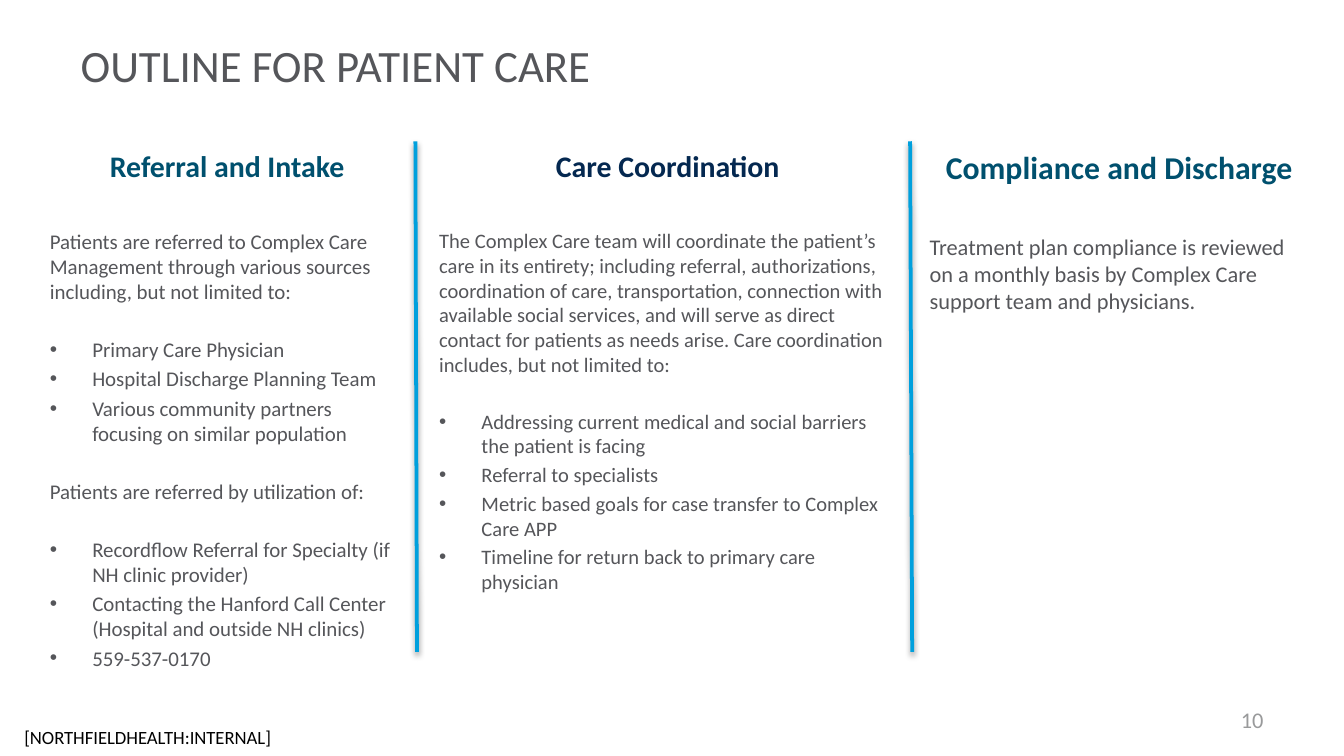
import pptx
import pptx.dml.color
import pptx.enum.shapes
import pptx.enum.text
import pptx.oxml
import pptx.oxml.ns
import pptx.util
from pptx.util import Cm

COLORS = {
    "text": "55565A",
    "teal": "00506E",
    "navy": "042850",
    "divider": "00A0DD",
    "number": "999A9B",
    "black": "000000",
    "white": "FFFFFF",
}
ALIGN = pptx.enum.text.PP_ALIGN
MIDDLE = pptx.enum.text.MSO_ANCHOR.MIDDLE
BULLET_INDENT = Cm(0.8)


def rgb(name):
    return pptx.dml.color.RGBColor.from_string(COLORS[name])


def write(paragraph, text, size, color, bold=False, align=ALIGN.LEFT, before=0, bullet=False):
    """Fill a paragraph with one formatted run, bulleted or flush left."""
    properties = paragraph._p.get_or_add_pPr()
    properties.set("marL", str(BULLET_INDENT if bullet else 0))
    properties.set("indent", str(-BULLET_INDENT if bullet else 0))
    paragraph.alignment = align
    paragraph.space_before = pptx.util.Pt(before)
    if bullet:
        font = pptx.oxml.parse_xml(f'<a:buFont {pptx.oxml.ns.nsdecls("a")} typeface="Arial"/>')
        mark = pptx.oxml.parse_xml(f'<a:buChar {pptx.oxml.ns.nsdecls("a")} char="•"/>')
        properties.extend([font, mark])
    else:
        properties.append(pptx.oxml.parse_xml(f'<a:buNone {pptx.oxml.ns.nsdecls("a")}/>'))
    run = paragraph.add_run()
    run.text = text
    run.font.name = "Calibri"
    run.font.size = pptx.util.Pt(size)
    run.font.bold = bold
    run.font.color.rgb = rgb(color)


deck = pptx.Presentation()
deck.slide_width, deck.slide_height = Cm(25.4), Cm(14.29)
slide = deck.slides.add_slide(deck.slide_layouts[1])

title = slide.shapes.title
title.left, title.top, title.width, title.height = Cm(1.27), Cm(0.03), Cm(22.86), Cm(2.39)
title.text_frame.vertical_anchor = MIDDLE
write(title.text_frame.paragraphs[0], "OUTLINE FOR PATIENT CARE", 24, "text")

# Three columns of the same height
top, height = Cm(2.67), Cm(9.65)
referral = slide.placeholders[1]
referral.left, referral.top, referral.width, referral.height = Cm(0.69), top, Cm(7.21), height
coordination = slide.shapes.add_shape(
    pptx.enum.shapes.MSO_SHAPE.RECTANGLE, Cm(8.05), top, Cm(9.14), height)
coordination.shadow.inherit = False
coordination.fill.solid()
coordination.fill.fore_color.rgb = rgb("white")
coordination.line.fill.background()
compliance = slide.shapes.add_textbox(Cm(17.32), top, Cm(7.67), height)

# Column, heading, heading size and colour, body size, groups of (introduction, bullets)
columns = [
    (referral, "Referral and Intake", 16, "teal", 11.2, [
        ("Patients are referred to Complex Care Management through various sources "
         "including, but not limited to:",
         ["Primary Care Physician",
          "Hospital Discharge Planning Team",
          "Various community partners focusing on similar population"]),
        ("Patients are referred by utilization of:",
         ["Recordflow Referral for Specialty (if NH clinic provider)",
          "Contacting the Hanford Call Center (Hospital and outside NH clinics)",
          "559-537-0170"]),
    ]),
    (coordination, "Care Coordination", 16, "navy", 11, [
        ("The Complex Care team will coordinate the patient’s care in its entirety; including "
         "referral, authorizations, coordination of care, transportation, connection with "
         "available social services, and will serve as direct contact for patients as needs "
         "arise. Care coordination includes, but not limited to:",
         ["Addressing current medical and social barriers the patient is facing",
          "Referral to specialists",
          "Metric based goals for case transfer to Complex Care APP",
          "Timeline for return back to primary care physician"]),
    ]),
    (compliance, "Compliance and Discharge", 17, "teal", 12, [
        ("Treatment plan compliance is reviewed on a monthly basis by Complex Care support "
         "team and physicians.", []),
    ]),
]
for column, heading, heading_size, heading_color, size, groups in columns:
    frame = column.text_frame
    frame.word_wrap = True
    frame.auto_size = pptx.enum.text.MSO_AUTO_SIZE.NONE
    frame.vertical_anchor = pptx.enum.text.MSO_ANCHOR.TOP
    write(frame.paragraphs[0], heading, heading_size, heading_color, True, ALIGN.CENTER)
    before = 1.5 * heading_size
    for introduction, items in groups:
        write(frame.add_paragraph(), introduction, size, "text", before=before)
        before = 1.58 * size
        for number, item in enumerate(items):
            write(frame.add_paragraph(), item, size, "text", bullet=True,
                  before=0.2 * size if number else before)

for x_top, x_bottom in [(7.85, 7.88), (17.2, 17.24)]:
    divider = slide.shapes.add_connector(
        pptx.enum.shapes.MSO_CONNECTOR.STRAIGHT, Cm(x_top), top, Cm(x_bottom), top + height)
    divider.line.color.rgb = rgb("divider")
    divider.line.width = pptx.util.Pt(2)
    divider._element.spPr.append(pptx.oxml.parse_xml(
        f'<a:effectLst {pptx.oxml.ns.nsdecls("a")}>'
        '<a:outerShdw blurRad="39400" dist="20300" dir="5400000" rotWithShape="0">'
        f'<a:srgbClr val="{COLORS["black"]}"><a:alpha val="38000"/></a:srgbClr>'
        '</a:outerShdw></a:effectLst>'))

slide_number = slide.shapes.add_textbox(Cm(18.21), Cm(13.23), Cm(5.92), Cm(0.76)).text_frame
slide_number.word_wrap = True
slide_number.vertical_anchor = MIDDLE
write(slide_number.paragraphs[0], "10", 12, "number", align=ALIGN.RIGHT)

classification = slide.shapes.add_textbox(0, Cm(13.56), Cm(5.36), Cm(0.74)).text_frame
classification.word_wrap = True
classification.vertical_anchor = MIDDLE
classification.margin_left = Cm(0.46)
classification.margin_right = classification.margin_top = classification.margin_bottom = 0
write(classification.paragraphs[0], "[NORTHFIELDHEALTH:INTERNAL]", 10, "black")

deck.save("out.pptx")
